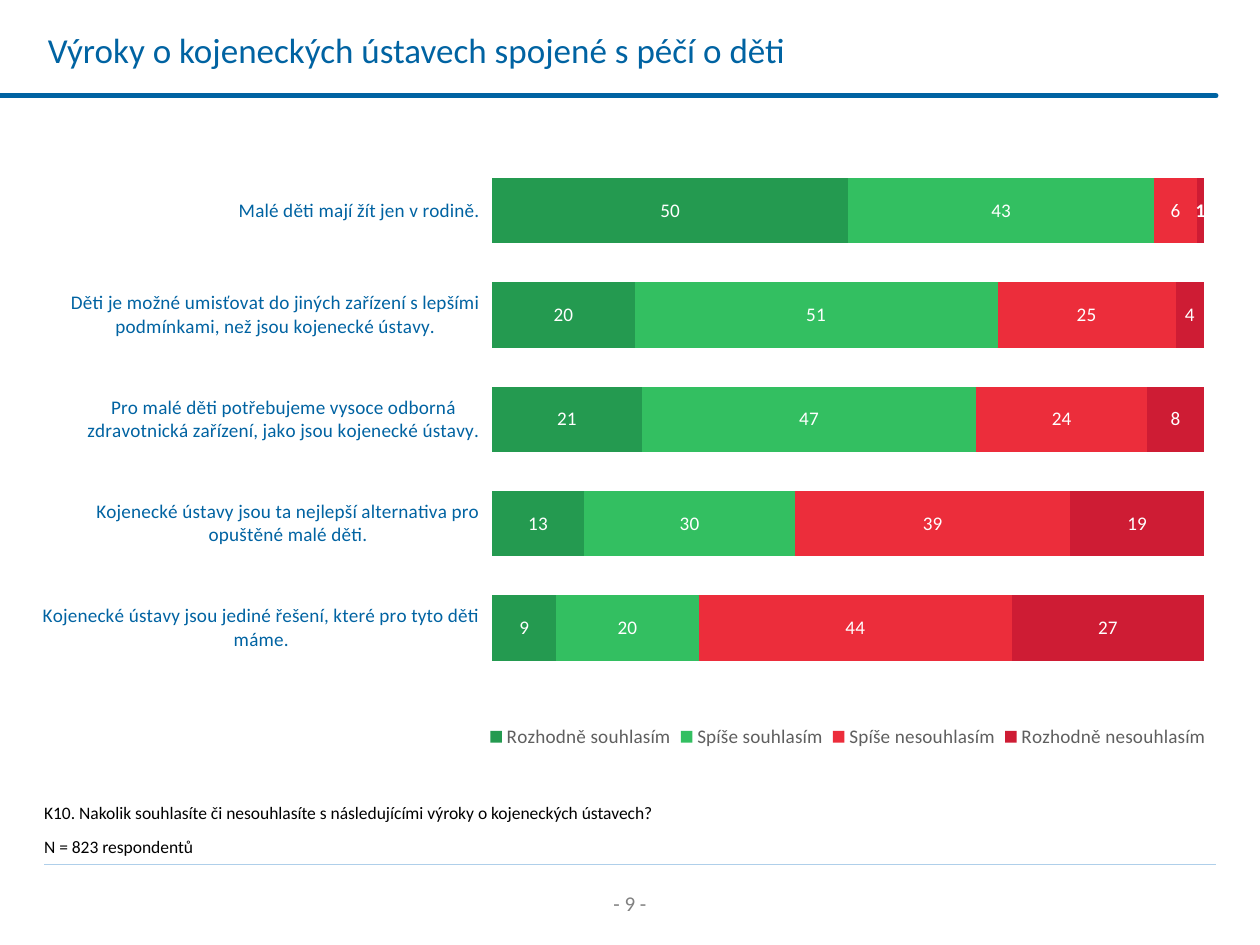
import pptx
import pptx.chart.data
import pptx.dml.color
import pptx.enum.chart
import pptx.enum.shapes
import pptx.enum.text
import pptx.oxml
import pptx.oxml.ns
import pptx.util
from pptx.util import Cm

BLUE, PALE_BLUE, GREY = "0063A2", "AFCFEA", "808080"
STATEMENTS = [
    "Malé děti mají žít jen v rodině.",
    "Děti je možné umisťovat do jiných zařízení s lepšími podmínkami, než jsou kojenecké ústavy.",
    "Pro malé děti potřebujeme vysoce odborná zdravotnická zařízení, jako jsou kojenecké ústavy.",
    "Kojenecké ústavy jsou ta nejlepší alternativa pro opuštěné malé děti.",
    "Kojenecké ústavy jsou jediné řešení, které pro tyto děti máme.",
]
ANSWERS = [
    ("Rozhodně souhlasím", "249A50", (50, 20, 21, 13, 9)),
    ("Spíše souhlasím", "33BF61", (43, 51, 47, 30, 20)),
    ("Spíše nesouhlasím", "EC2D3B", (6, 25, 24, 39, 44)),
    ("Rozhodně nesouhlasím", "CE1C34", (1, 4, 8, 19, 27)),
]


def rgb(value):
    return pptx.dml.color.RGBColor.from_string(value)


def apply(target, formats):
    for attribute, value in formats.items():
        setattr(target, attribute, value)


def style_font(font, size, color, bold=False):
    apply(font, {"name": "Calibri", "size": pptx.util.Pt(size), "bold": bold})
    font.color.rgb = rgb(color)


def write(frame, text, size, color, align, formats):
    apply(frame, {"word_wrap": True, "text": text, **formats})
    paragraph = frame.paragraphs[0]
    paragraph.alignment = align
    style_font(paragraph.runs[0].font, size, color)


def add_rule(slide, left, top, right, color, width, cap="flat"):
    rule = slide.shapes.add_connector(
        pptx.enum.shapes.MSO_CONNECTOR.STRAIGHT, Cm(left), Cm(top), Cm(right), Cm(top))
    rule.line.color.rgb = rgb(color)
    rule.line.width = pptx.util.Pt(width)
    rule.line._get_or_add_ln().set("cap", cap)
    properties = rule._element.spPr
    properties.append(pptx.oxml.parse_xml(
        f'<a:effectLst {pptx.oxml.ns.nsdecls("a")}/>'))


def add_header(slide, left, top, width, height):
    title = slide.shapes.title
    apply(title, {"left": Cm(left), "top": Cm(top),
                  "width": Cm(width), "height": Cm(height)})
    write(title.text_frame, "Výroky o kojeneckých ústavech spojené s péčí o děti", 20, BLUE,
          pptx.enum.text.PP_ALIGN.LEFT,
          {"vertical_anchor": pptx.enum.text.MSO_ANCHOR.MIDDLE})
    add_rule(slide, 0, top + height - 0.08, left + width, BLUE, 3, "rnd")


def set_layout(element, x, y, w, h, inner=False):
    """Place a plot area or legend by fractions of the chart's size."""
    target = '<c:layoutTarget val="inner"/>' if inner else ""
    layout = pptx.oxml.parse_xml(
        f'<c:layout {pptx.oxml.ns.nsdecls("c")}><c:manualLayout>{target}'
        '<c:xMode val="edge"/><c:yMode val="edge"/>'
        f'<c:x val="{x}"/><c:y val="{y}"/><c:w val="{w}"/><c:h val="{h}"/>'
        '</c:manualLayout></c:layout>')
    for old in element.findall(pptx.oxml.ns.qn("c:layout")):
        element.remove(old)
    position = element.find(pptx.oxml.ns.qn("c:legendPos"))
    if position is None:
        element.insert(0, layout)
    else:
        position.addnext(layout)


def add_answer_chart(slide, left, top, width, height):
    data = pptx.chart.data.CategoryChartData(number_format="0")
    data.categories = STATEMENTS
    for name, _, values in ANSWERS:
        data.add_series(name, values)
    chart = slide.shapes.add_chart(
        pptx.enum.chart.XL_CHART_TYPE.BAR_STACKED_100,
        Cm(left), Cm(top), Cm(width), Cm(height), data).chart
    chart.has_title = False
    style_font(chart.font, 18, "000000")

    plot = chart.plots[0]
    apply(plot, {"gap_width": 60, "overlap": 100, "vary_by_categories": False})
    center = pptx.enum.chart.XL_LABEL_POSITION.CENTER
    for series, (_, color, _) in zip(plot.series, ANSWERS):
        series.format.fill.solid()
        series.format.fill.fore_color.rgb = rgb(color)
        labels = series.data_labels
        apply(labels, {"show_value": True, "position": center,
                       "number_format": "#,##0", "number_format_is_linked": False})
        style_font(labels.font, 11, "FFFFFF")
    smallest = plot.series[-1].points[0].data_label
    style_font(smallest.font, 11, "FFFFFF", bold=True)
    smallest.position = center

    statements = chart.category_axis
    apply(statements, {"reverse_order": True, "has_major_gridlines": False})
    statements.format.line.fill.background()
    style_font(statements.tick_labels.font, 11, BLUE)
    apply(chart.value_axis, {"visible": False, "has_major_gridlines": False})

    chart.has_legend = True
    apply(chart.legend, {"position": pptx.enum.chart.XL_LEGEND_POSITION.TOP,
                         "include_in_layout": False})
    style_font(chart.legend.font, 11, "5F5F5F")
    plot_area = chart._chartSpace.chart.plotArea
    set_layout(plot_area, 0.38, 0.04, 0.61, 0.83, inner=True)
    set_layout(chart.legend._element, 0.37, 0.93, 0.63, 0.06)


def add_text(slide, text, left, top, width, height, size, color, align, formats):
    box = slide.shapes.add_textbox(Cm(left), Cm(top), Cm(width), Cm(height))
    write(box.text_frame, text, size, color, align, formats)


def add_footer(slide, left, top, width):
    notes = ["K10. Nakolik souhlasíte či nesouhlasíte s následujícími výroky o kojeneckých ústavech?",
             "N = 823 respondentů"]
    for row, note in enumerate(notes):
        add_text(slide, note, left, top + row * 0.68, width, 0.68, 10, "000000",
                 pptx.enum.text.PP_ALIGN.LEFT, {"margin_left": 0})
    add_rule(slide, left, top + 1.37, left + width, PALE_BLUE, 0.5)
    number_width = 3.2
    add_text(slide, "- 9 -", left + (width - number_width) / 2, top + 1.78,
             number_width, 0.76, 12, GREY, pptx.enum.text.PP_ALIGN.CENTER, {})


def main():
    presentation = pptx.Presentation()
    apply(presentation, {"slide_width": Cm(25.4), "slide_height": Cm(19.05)})
    slide = presentation.slides.add_slide(presentation.slide_layouts[5])
    add_header(slide, 0.71, 0, 23.8, 2.01)
    add_answer_chart(slide, 0.86, 2.69, 23.65, 12.67)
    add_footer(slide, 0.89, 16.05, 23.62)
    presentation.save("out.pptx")


if __name__ == "__main__":
    main()
